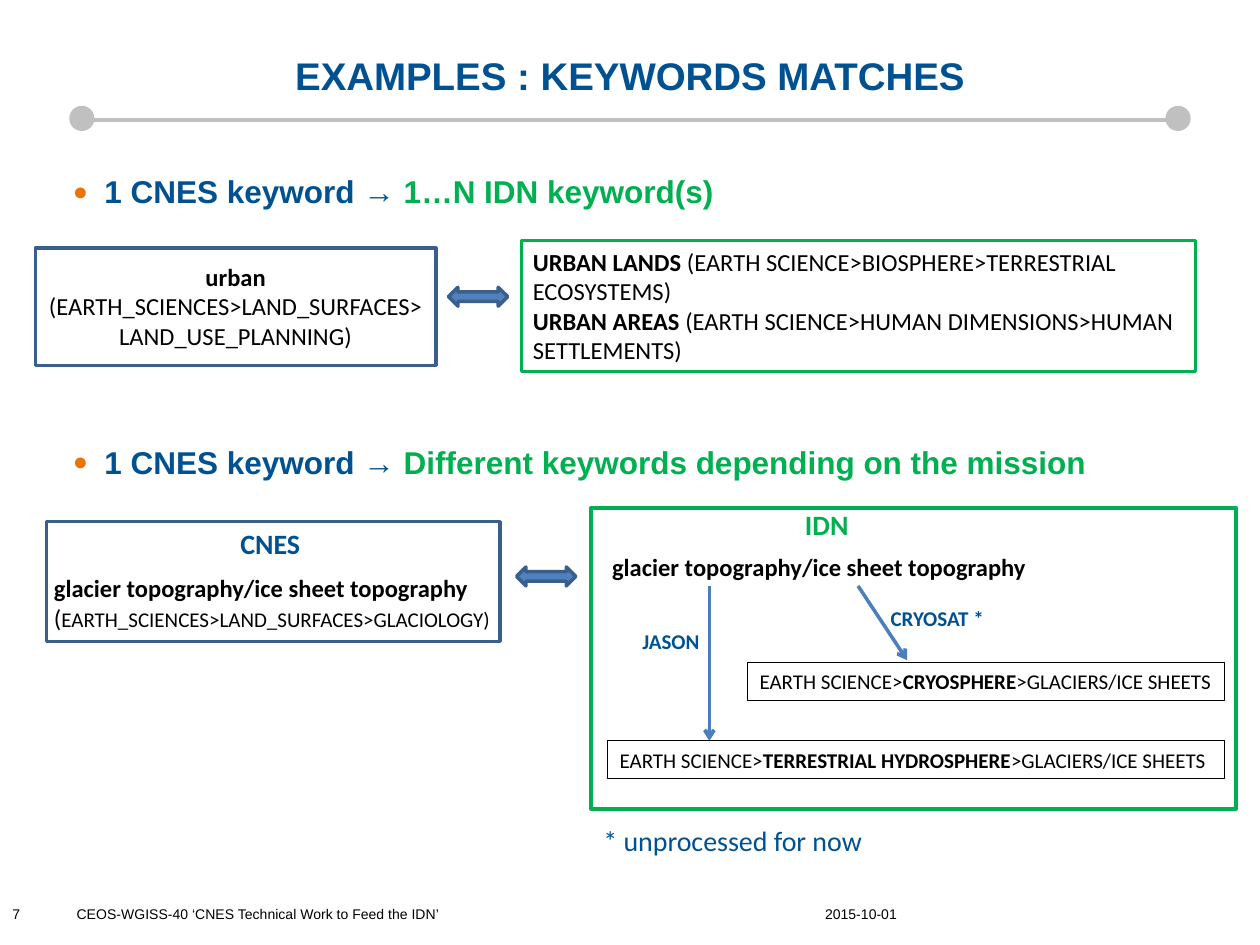
from pptx import Presentation
from pptx.dml.color import RGBColor
from pptx.enum.shapes import MSO_CONNECTOR, MSO_SHAPE
from pptx.enum.text import MSO_ANCHOR, PP_ALIGN
from pptx.oxml import parse_xml
from pptx.oxml.ns import nsdecls
from pptx.util import Inches, Pt

HUE = {"navy": "005191", "green": "00B050", "black": "000000", "grey": "C0C0C0",
       "orange": "EC7305", "blue": "4F81BD", "edge": "3A5F8C", "link": "4B7EBC"}
RGB = {name: RGBColor.from_string(code) for name, code in HUE.items()}

deck = Presentation()
deck.slide_width, deck.slide_height = Inches(10), Inches(7.5)
slide = deck.slides.add_slide(deck.slide_layouts[6])
shapes = slide.shapes
U = deck.slide_width / 100  # square grid: 100 columns by 75 rows


def draw(kind, spot, fill=None, line=None, width=2):
    shape = shapes.add_shape(kind, *(int(n * U) for n in spot))
    shape.shadow.inherit = False
    if fill:
        shape.fill.solid()
        shape.fill.fore_color.rgb = RGB[fill]
    else:
        shape.fill.background()
    if line:
        shape.line.color.rgb = RGB[line]
        shape.line.width = Pt(width)
    else:
        shape.line.fill.background()
    return shape


def write(spot, paras, size, font="Calibri", align=PP_ALIGN.LEFT):
    """Each paragraph is a list of runs: words, colour, bold and maybe a size."""
    box = shapes.add_textbox(*(int(n * U) for n in spot))
    frame = box.text_frame
    frame.word_wrap = True
    for i, runs in enumerate(paras):
        para = frame.paragraphs[0] if i == 0 else frame.add_paragraph()
        para.alignment = align
        for words, hue, bold, *own in runs:
            run = para.add_run()
            run.text = words
            run.font.name = font
            run.font.size = Pt(own[0] if own else size)
            run.font.bold = bold
            run.font.color.rgb = RGB[hue]
    return frame


# Lines: title rule, then the two mission arrows
for ends, hue, width, tip in [((94.1, 9.5, 5.9, 9.5), "grey", 2.5, False),
                              ((56.3, 46.5, 56.3, 58.8), "link", 2, True),
                              ((68.1, 46.5, 72, 52.4), "link", 2, True)]:
    line = shapes.add_connector(MSO_CONNECTOR.STRAIGHT, *(int(n * U) for n in ends))
    line.line.color.rgb = RGB[hue]
    line.line.width = Pt(width)
    if tip:
        line.line._get_or_add_ln().append(
            parse_xml(f'<a:tailEnd {nsdecls("a")} type="arrow"/>'))
    line._element.spPr.append(parse_xml(f'<a:effectLst {nsdecls("a")}/>'))

# Title with the rule's end dots
for left in (5.5, 92.5):
    draw(MSO_SHAPE.OVAL, (left, 8.4, 2, 2), "grey")
title = write((5.9, 2, 88.2, 7.9), [[("EXAMPLES : KEYWORDS MATCHES", "navy", True)]],
              22, "Arial", PP_ALIGN.CENTER)
title.vertical_anchor = MSO_ANCHOR.MIDDLE

# Two bulleted headings
heads = write((3.4, 13.2, 95.8, 26),
              [[("1 CNES keyword → ", "navy", True), (words, "green", True)] for words in
               ("1…N IDN keyword(s)", "Different keywords depending on the mission")],
              18, "Arial")
for para in heads.paragraphs:
    props = para._p.get_or_add_pPr()
    props.set("marL", str(int(3.9 * U)))
    props.set("indent", str(int(-2.5 * U)))
    for mark in (f'buClr {nsdecls("a")}><a:srgbClr val="{HUE["orange"]}"/></a:buClr',
                 f'buSzPct {nsdecls("a")} val="80000"/',
                 f'buFont {nsdecls("a")} typeface="Arial"/',
                 f'buChar {nsdecls("a")} char="●"/'):
        props.append(parse_xml(f"<a:{mark}>"))
heads.paragraphs[1].space_before = Pt(133)

# Frames and double arrows
for spot, hue, width in [((2.8, 19.7, 31.8, 9.3), "edge", 2),
                         ((41.4, 19.1, 53.5, 10.4), "green", 2),
                         ((3.7, 41.4, 36, 9.5), "edge", 2),
                         ((46.9, 40.3, 51.2, 23.9), "green", 2),
                         ((48.2, 58.8, 49, 3), "black", 0.75),
                         ((59.3, 52.6, 37.9, 3), "black", 0.75)]:
    draw(MSO_SHAPE.RECTANGLE, spot, None, hue, width)
for left, top in [(35.6, 22.8), (41, 45)]:
    draw(MSO_SHAPE.LEFT_RIGHT_ARROW, (left, top, 4.7, 1.5), "blue", "edge")

# First example
write((2.8, 20.3, 31.8, 8.1),
      [[("urban ", "black", True),
        ("(EARTH_SCIENCES>LAND_SURFACES>LAND_USE_PLANNING)", "black", False)]],
      14, align=PP_ALIGN.CENTER)
write((41.3, 19.1, 53.5, 10.4),
      [[("URBAN LANDS ", "black", True),
        ("(EARTH SCIENCE>BIOSPHERE>TERRESTRIAL ECOSYSTEMS)", "black", False)],
       [("URBAN AREAS ", "black", True),
        ("(EARTH SCIENCE>HUMAN DIMENSIONS>HUMAN SETTLEMENTS)", "black", False)]], 14)

# Second example
topic = ("glacier topography/ice sheet topography", "black", True)
write((3.3, 45, 37.2, 5.7),
      [[topic], [("(", "black", False),
                 ("EARTH_SCIENCES>LAND_SURFACES>GLACIOLOGY)", "black", False, 12)]], 14)
write((47.6, 43.3, 37.6, 3.4), [[topic]], 14)
for spot, word in [((48.2, 58.8, 49, 3), "TERRESTRIAL HYDROSPHERE"),
                   ((59.3, 52.6, 37.9, 3), "CRYOSPHERE")]:
    write(spot, [[("EARTH SCIENCE>", "black", False), (word, "black", True),
                  (">GLACIERS/ICE SHEETS", "black", False)]], 12)

# Labels and footnote
for spot, words, hue, bold, size in [
        ((18.1, 41.3, 7.1, 3.7), "CNES", "navy", True, 16),
        ((62.9, 39.8, 7.1, 3.7), "IDN", "green", True, 16),
        ((50, 49.4, 7, 3), "JASON", "navy", True, 12),
        ((69.7, 47.6, 9.4, 3), "CRYOSAT *", "navy", True, 12),
        ((46.9, 64.9, 24.5, 3.7), "* unprocessed for now", "navy", False, 16)]:
    write(spot, [[(words, hue, bold)]], size)

# Footer
for left, width, words in [(0, 4.7, "7"), (64.5, 23.3, "2015-10-01"),
                           (5.1, 59.1, "CEOS-WGISS-40 ‘CNES Technical Work to Feed the IDN’")]:
    write((left, 71.4, width, 2.4), [[(words, "black", False)]], 8, "Arial")

deck.save("out.pptx")
